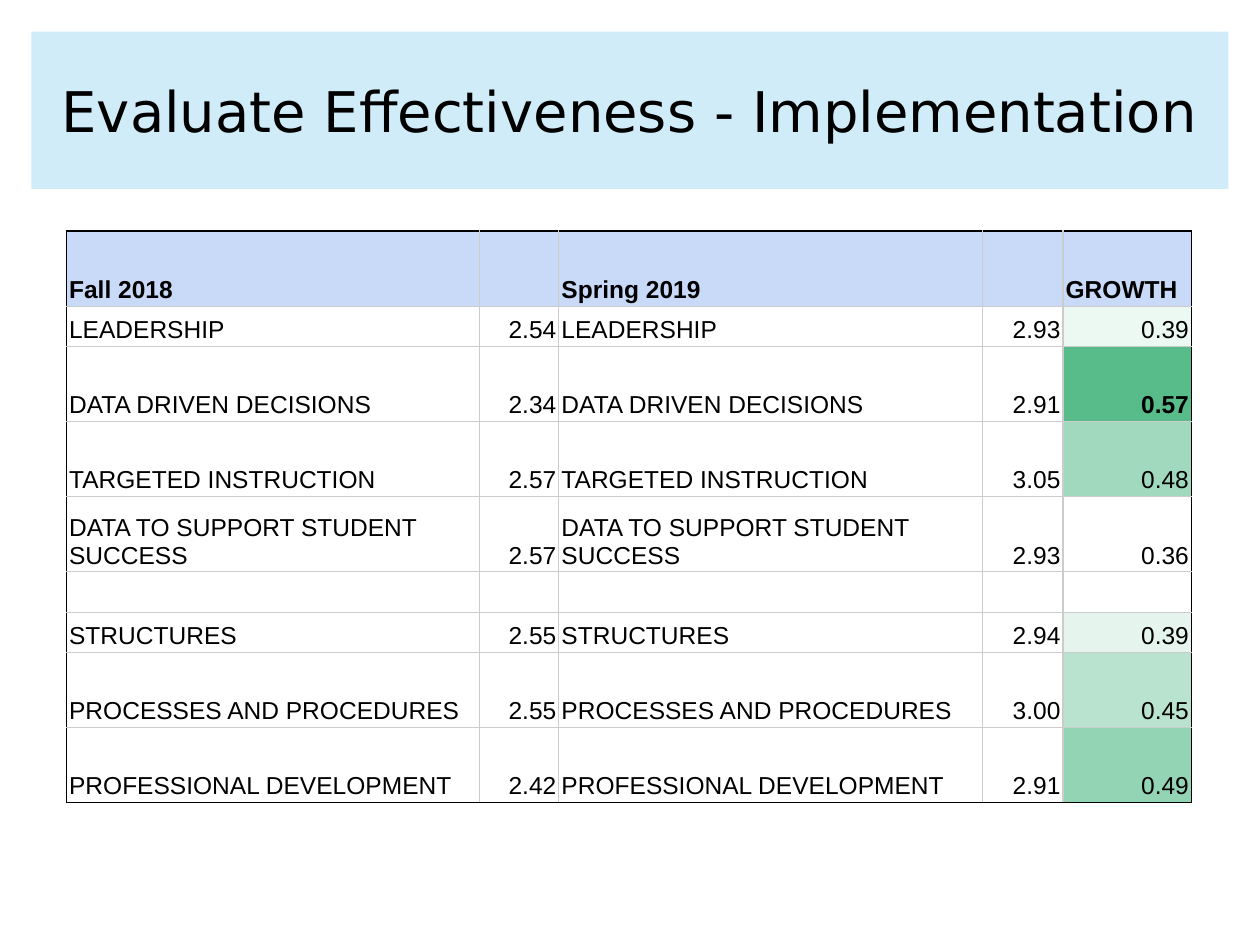
from typing import NamedTuple

from lxml import etree
from pptx import Presentation
from pptx.dml.color import RGBColor
from pptx.enum.shapes import MSO_SHAPE
from pptx.enum.text import MSO_ANCHOR, PP_ALIGN
from pptx.oxml.ns import qn
from pptx.util import Pt

RECT = MSO_SHAPE.RECTANGLE
MIDDLE, BOTTOM = MSO_ANCHOR.MIDDLE, MSO_ANCHOR.BOTTOM
LEFT, CENTER, RIGHT = PP_ALIGN.LEFT, PP_ALIGN.CENTER, PP_ALIGN.RIGHT

BLACK, WHITE, GREY = "000000", "FFFFFF", "CCCCCC"
SKY, HEAD = "2AABE1", "C9DAF8"
TALL, SHORT = 43, 22.9
WIDTHS = (236, 45.4, 242, 46.1, 73.4)


class Row(NamedTuple):
    name: str
    fall: str
    spring: str
    growth: str
    tint: str = WHITE
    height: float = TALL
    strong: bool = False


ROWS = (
    Row("LEADERSHIP", "2.54", "2.93", "0.39", "ECF8F2", SHORT),
    Row("DATA DRIVEN DECISIONS", "2.34", "2.91", "0.57", "57BB8A", strong=True),
    Row("TARGETED INSTRUCTION", "2.57", "3.05", "0.48", "A0D9BD"),
    Row("DATA TO SUPPORT STUDENT SUCCESS", "2.57", "2.93", "0.36"),
    Row("", "", "", "", height=SHORT),
    Row("STRUCTURES", "2.55", "2.94", "0.39", "E5F5ED", SHORT),
    Row("PROCESSES AND PROCEDURES", "2.55", "3.00", "0.45", "BAE3CF"),
    Row("PROFESSIONAL DEVELOPMENT", "2.42", "2.91", "0.49", "93D4B4"),
)


def paint(fill, color: str) -> None:
    fill.solid()
    fill.fore_color.rgb = RGBColor.from_string(color)


def write(frame, text: str, *, size: float = 14, face: str = "Arial",
          bold: bool = False, align=LEFT) -> None:
    para = frame.paragraphs[0]
    para.alignment = align
    run = para.add_run()
    run.text = text
    run.font.size = Pt(size)
    run.font.name = face
    run.font.bold = bold
    run.font.color.rgb = RGBColor.from_string(BLACK)


def border(cell, side: str, color: str) -> None:
    props = cell._tc.get_or_add_tcPr()
    line = etree.SubElement(props, qn(f"a:ln{side}"), w=str(Pt(0.75)))
    fill = etree.SubElement(line, qn("a:solidFill"))
    etree.SubElement(fill, qn("a:srgbClr"), val=color)


def draw_title(slide) -> None:
    box = slide.shapes.add_shape(RECT, Pt(18), Pt(18), Pt(684), Pt(90))
    box.shadow.inherit = False
    box.line.fill.background()
    paint(box.fill, SKY)
    tone = box._element.spPr.find(qn("a:solidFill"))[0]
    etree.SubElement(tone, qn("a:alpha"), val="22000")
    frame = box.text_frame
    frame.word_wrap = True
    frame.vertical_anchor = MIDDLE
    write(frame, "Evaluate Effectiveness - Implementation",
          size=32, face="DejaVu Sans", align=CENTER)


def draw_cell(table, row: int, col: int, text: str, fill: str,
              bold: bool) -> None:
    cell = table.cell(row, col)
    cell.margin_left = cell.margin_right = Pt(1.5)
    cell.margin_top = cell.margin_bottom = Pt(1.5)
    cell.vertical_anchor = BOTTOM
    edges = {"L": col == 0, "R": col == len(WIDTHS) - 1,
             "T": row == 0, "B": row == len(ROWS)}
    for side, outer in edges.items():
        border(cell, side, BLACK if outer else GREY)
    paint(cell.fill, fill)
    align = RIGHT if row and col in (1, 3, 4) else LEFT
    write(cell.text_frame, text, bold=bold, align=align)


def draw_table(slide) -> None:
    heights = [TALL, *(item.height for item in ROWS)]
    frame = slide.shapes.add_table(
        len(heights), len(WIDTHS), Pt(38), Pt(132),
        Pt(sum(WIDTHS)), Pt(sum(heights)))
    table = frame.table
    table.first_row = table.horz_banding = False
    for col, width in zip(table.columns, WIDTHS):
        col.width = Pt(width)
    for row, height in zip(table.rows, heights):
        row.height = Pt(height)
    for col, text in enumerate(("Fall 2018", "", "Spring 2019", "", "GROWTH")):
        draw_cell(table, 0, col, text, HEAD, True)
    for row, item in enumerate(ROWS, 1):
        texts = (item.name, item.fall, item.name, item.spring, item.growth)
        for col, text in enumerate(texts):
            last = col == len(WIDTHS) - 1
            draw_cell(table, row, col, text, item.tint if last else WHITE,
                      last and item.strong)


def main() -> None:
    deck = Presentation()
    deck.slide_width, deck.slide_height = Pt(720), Pt(540)
    slide = deck.slides.add_slide(deck.slide_layouts[6])
    draw_title(slide)
    draw_table(slide)
    deck.save("out.pptx")


if __name__ == "__main__":
    main()
